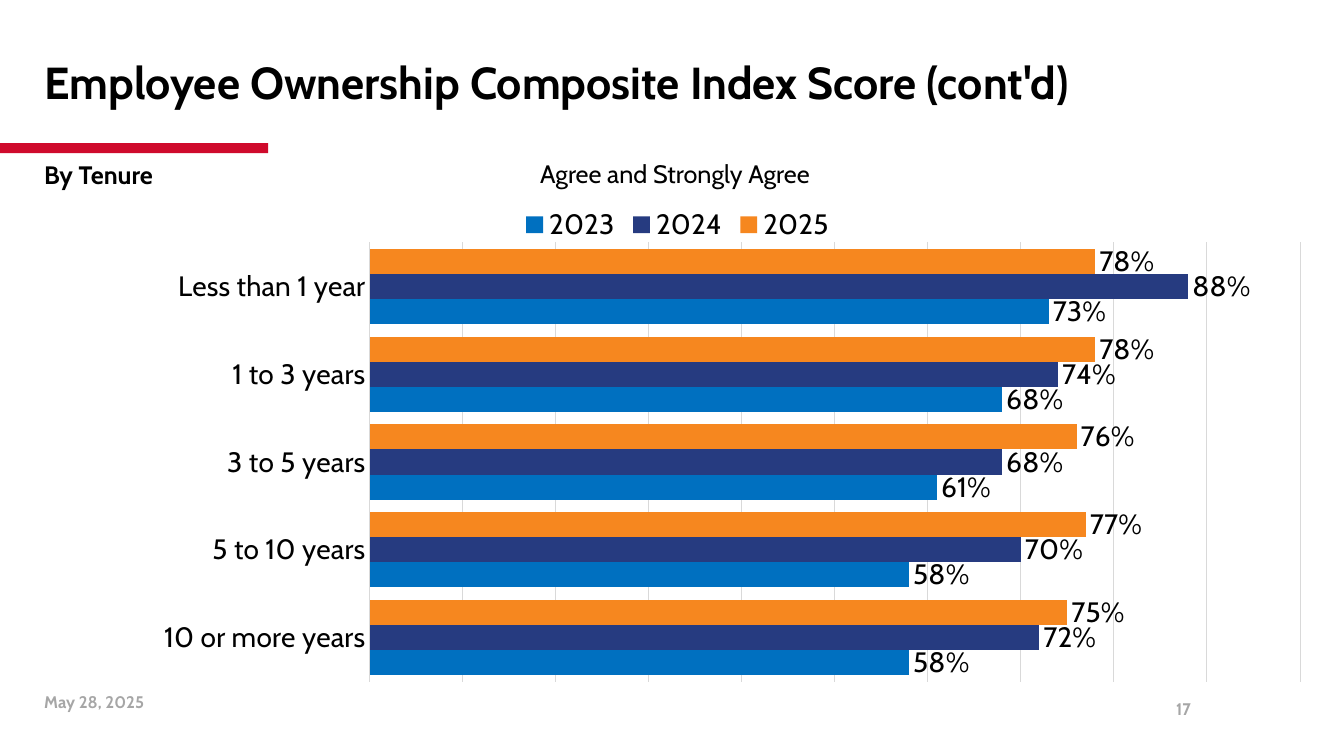
from lxml import etree
from pptx import Presentation
from pptx.chart.data import CategoryChartData
from pptx.dml.color import RGBColor
from pptx.enum.chart import XL_CHART_TYPE, XL_LABEL_POSITION, XL_LEGEND_POSITION, XL_TICK_MARK
from pptx.enum.shapes import MSO_SHAPE
from pptx.enum.text import MSO_ANCHOR, MSO_AUTO_SIZE, PP_ALIGN
from pptx.oxml.ns import qn
from pptx.util import Inches, Pt

BARS = XL_CHART_TYPE.BAR_CLUSTERED
OUTSIDE = XL_LABEL_POSITION.OUTSIDE_END
TOP_KEY = XL_LEGEND_POSITION.TOP
NO_TICK = XL_TICK_MARK.NONE
RECT = MSO_SHAPE.RECTANGLE
TOP, MIDDLE = MSO_ANCHOR.TOP, MSO_ANCHOR.MIDDLE
LEFT, CENTER, RIGHT = PP_ALIGN.LEFT, PP_ALIGN.CENTER, PP_ALIGN.RIGHT
FIT, FIXED = MSO_AUTO_SIZE.SHAPE_TO_FIT_TEXT, MSO_AUTO_SIZE.NONE
FACE, BLACK, GREY, GRID, RED = "Cabin", "000000", "A6A6A6", "D9D9D9", "CF0A2C"

TENURES = ["Less than 1 year", "1 to 3 years", "3 to 5 years",
           "5 to 10 years", "10 or more years"]
SCORES = [
    ("2025", "F6871F", [0.78, 0.78, 0.76, 0.77, 0.75]),
    ("2024", "263B80", [0.88, 0.74, 0.68, 0.70, 0.72]),
    ("2023", "0070C0", [0.73, 0.68, 0.61, 0.58, 0.58]),
]
PLOT = {"layoutTarget": "inner", "xMode": "edge", "yMode": "edge",
        "x": 0.27, "y": 0.093, "w": 0.695, "h": 0.853}


def rgb(code):
    """Turn a hex string into a colour."""
    return RGBColor.from_string(code)


def apply(item, traits):
    """Set each attribute of an object from a dict."""
    for name, value in traits.items():
        setattr(item, name, value)


def style(font, size, code=BLACK, bold=False):
    """Set face, size, weight and colour of a font."""
    apply(font, {"name": FACE, "size": Pt(size), "bold": bold})
    font.color.rgb = rgb(code)


def place(shape, box):
    """Move and size a shape in inches."""
    apply(shape, dict(zip(("left", "top", "width", "height"), map(Inches, box))))


def title(slide, text, box):
    """Fill and format the title placeholder."""
    head = slide.shapes.title
    place(head, box)
    frame = head.text_frame
    apply(frame, {"text": text, "word_wrap": True, "auto_size": FIXED,
                  "vertical_anchor": MIDDLE})
    line = frame.paragraphs[0]
    apply(line, {"alignment": LEFT, "line_spacing": 0.9})
    style(line.font, 32, bold=True)


def label(slide, text, box, size, code=BLACK, bold=True, align=LEFT,
          anchor=TOP, fit=FIXED, after=0):
    """Add a one-line text box."""
    frame = slide.shapes.add_textbox(*map(Inches, box)).text_frame
    apply(frame, {"text": text, "word_wrap": True, "auto_size": fit,
                  "vertical_anchor": anchor})
    line = frame.paragraphs[0]
    apply(line, {"alignment": align, "space_after": Pt(after)})
    style(line.font, size, code, bold)


def band(slide, box, code):
    """Add a plain filled bar."""
    shape = slide.shapes.add_shape(RECT, *map(Inches, box))
    shape.shadow.inherit = False
    shape.fill.solid()
    shape.fill.fore_color.rgb = rgb(code)
    shape.line.fill.background()


def rule(line):
    """Format a thin chart line."""
    line.width = Pt(0.75)
    line.color.rgb = rgb(GRID)


def layout(chart):
    """Fix the inner plot area within the chart."""
    area = chart.element.find(".//" + qn("c:plotArea"))
    for old in area.findall(qn("c:layout")):
        area.remove(old)
    frame = etree.Element(qn("c:layout"))
    manual = etree.SubElement(frame, qn("c:manualLayout"))
    for name, value in PLOT.items():
        etree.SubElement(manual, qn("c:" + name)).set("val", str(value))
    area.insert(0, frame)


def axes(chart):
    """Format the tenure axis and the hidden score axis."""
    tenure, score = chart.category_axis, chart.value_axis
    apply(tenure, {"reverse_order": True, "major_tick_mark": NO_TICK,
                   "minor_tick_mark": NO_TICK})
    style(tenure.tick_labels.font, 20)
    rule(tenure.format.line)
    apply(score, {"minimum_scale": 0, "maximum_scale": 1, "major_unit": 0.1,
                  "has_major_gridlines": True, "visible": False})
    rule(score.major_gridlines.format.line)


def bars(slide, box):
    """Add the clustered bar chart of scores."""
    data = CategoryChartData(number_format="0%")
    data.categories = TENURES
    for year, _, values in SCORES:
        data.add_series(year, values)
    chart = slide.shapes.add_chart(BARS, *map(Inches, box), data).chart
    apply(chart, {"has_title": False, "has_legend": True})
    style(chart.font, 20)
    apply(chart.legend, {"position": TOP_KEY, "include_in_layout": False})
    style(chart.legend.font, 20)
    plot = chart.plots[0]
    apply(plot, {"gap_width": 50, "overlap": 0, "vary_by_categories": False})
    for series, (_, code, _) in zip(plot.series, SCORES):
        series.format.fill.solid()
        series.format.fill.fore_color.rgb = rgb(code)
        marks = series.data_labels
        apply(marks, {"show_value": True, "position": OUTSIDE,
                      "number_format": "0%", "number_format_is_linked": False})
        style(marks.font, 20)
    axes(chart)
    layout(chart)


def main():
    """Build and save the slide."""
    deck = Presentation()
    apply(deck, {"slide_width": Inches(13.33), "slide_height": Inches(7.5)})
    slide = deck.slides.add_slide(deck.slide_layouts[5])
    band(slide, (0, 1.42, 2.66, 0.1), RED)
    title(slide, "Employee Ownership Composite Index Score (cont'd)",
          (0.34, 0.23, 12.64, 1.23))
    bars(slide, (0.08, 1.93, 13.28, 5.11))
    label(slide, "Agree and Strongly Agree", (0.03, 1.52, 13.33, 0.4), 18,
          bold=False, align=CENTER, fit=FIT)
    label(slide, "By Tenure", (0.34, 1.53, 1.68, 0.4), 18, fit=FIT)
    label(slide, "17", (8.91, 6.83, 3, 0.4), 12, GREY, align=RIGHT,
          anchor=MIDDLE, after=6)
    label(slide, "May 28, 2025", (0.34, 6.81, 3.07, 0.4), 12, GREY, after=12)
    deck.save("out.pptx")


if __name__ == "__main__":
    main()
